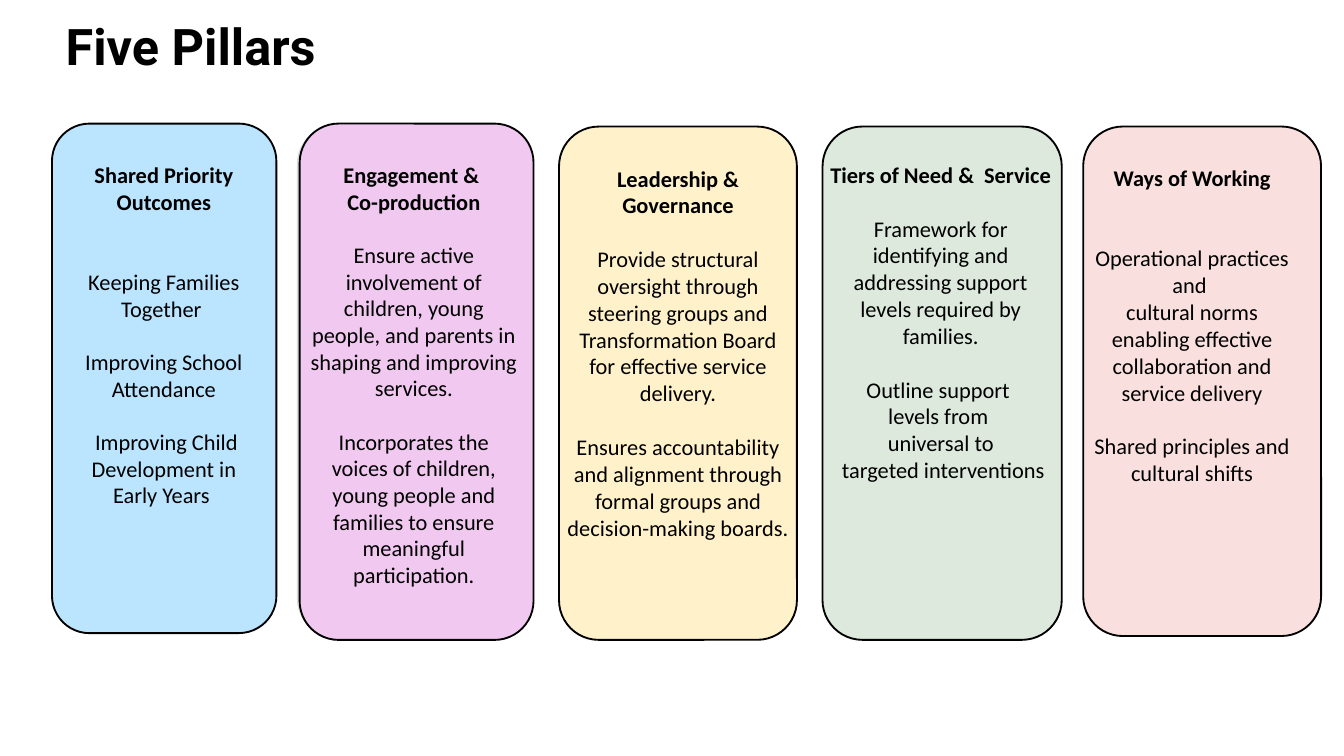
from dataclasses import dataclass

import pptx
import pptx.dml.color
import pptx.enum.shapes
import pptx.enum.text
import pptx.util


@dataclass(frozen=True)
class Theme:
    ink: str = "000000"
    backing: str = "D9D9D9"
    blue: str = "BBE5FF"
    pink: str = "F1C9F0"
    cream: str = "FFF2CB"
    green: str = "DDE9DD"
    rose: str = "F9E0DE"
    title_font: str = "Roboto"
    body_font: str = "Calibri"
    title_size: float = 27
    title_line: float = 17
    body_size: float = 12
    body_line: float = 14.3
    outline: float = 1


THEME = Theme()
WIDTH = pptx.util.Inches(10)
HEIGHT = WIDTH * 9 // 16
COLUMN, ROW = WIDTH / 100, HEIGHT / 100  # one hundredth of the slide each way

# box: left, top, width, height; copy: inset left, inset top, width.
# lines: blank lines before the paragraph, then its text; the first is the heading.
PILLARS = [
    dict(box=(3.87, 16.36, 16.7, 67.4), copy=(1.63, 5, 13.4), fill=THEME.blue, lines=[
        (0, "Shared Priority Outcomes"),
        (2, "Keeping Families Together "),
        (1, "Improving School Attendance"),
        (1, " Improving Child Development in Early Years "),
    ]),
    dict(box=(22.3, 16.36, 17.4, 68.3), copy=(0.8, 5, 15.4), fill=THEME.pink, lines=[
        (0, "Engagement & "),
        (0, "Co-production"),
        (1, "Ensure active involvement of children, young people, and parents "
            "in shaping and improving services."),
        (1, "Incorporates the voices of children, young people and families "
            "to ensure meaningful participation."),
    ], heading_lines=2, backing=(22.1, 16.5, 17.4, 67.8)),
    dict(box=(41.6, 16.74, 17.7, 67.9), copy=(0.6, 5.1, 16.5), fill=THEME.cream, lines=[
        (0, "Leadership & Governance"),
        (1, "Provide structural oversight through steering groups and "
            "Transformation Board for effective service delivery."),
        (1, "Ensures accountability and alignment through formal groups and "
            "decision-making boards."),
    ], single_spaced=True),
    dict(box=(61.2, 16.74, 17.8, 67.9), copy=(0.4, 4.6, 16.8), fill=THEME.green, lines=[
        (0, "Tiers of Need &  Service"),
        (1, "Framework for identifying and addressing support levels "
            "required by families."),
        (1, "Outline support "),
        (0, "levels from "),
        (0, "universal to"),
        (0, " targeted interventions"),
    ], single_spaced=True),
    dict(box=(80.6, 16.74, 17.7, 67.4), copy=(0.7, 5, 16.2), fill=THEME.rose, lines=[
        (0, "Ways of Working"),
        (2, "Operational practices and "),
        (0, "cultural norms enabling effective collaboration and service delivery"),
        (1, "Shared principles and cultural shifts"),
    ], single_spaced=True, heading_margin=1.4),
]


def rgb(value):
    return pptx.dml.color.RGBColor.from_string(value)


def on_grid(box):
    left, top, width, height = box
    return round(left * COLUMN), round(top * ROW), round(width * COLUMN), round(height * ROW)


def apply(target, formats):
    for name, value in formats.items():
        setattr(target, name, value)


def add_paragraph(frame, text, first, font, layout):
    paragraph = frame.paragraphs[0] if first else frame.add_paragraph()
    apply(paragraph, layout)
    run = paragraph.add_run()
    run.text = text
    apply(run.font, font)
    run.font.color.rgb = rgb(THEME.ink)
    return paragraph


def add_title(slide, box, text):
    frame = slide.shapes.add_textbox(*on_grid(box)).text_frame
    frame.word_wrap = True
    add_paragraph(
        frame, text, True,
        dict(name=THEME.title_font, size=pptx.util.Pt(THEME.title_size), bold=True),
        dict(line_spacing=pptx.util.Pt(THEME.title_line)),
    )


def add_panel(slide, box, fill, outlined=True):
    panel = slide.shapes.add_shape(
        pptx.enum.shapes.MSO_SHAPE.ROUNDED_RECTANGLE, *on_grid(box))
    panel.shadow.inherit = False
    panel.fill.solid()
    panel.fill.fore_color.rgb = rgb(fill)
    if outlined:
        panel.line.color.rgb = rgb(THEME.ink)
        panel.line.width = pptx.util.Pt(THEME.outline)
    else:
        panel.line.fill.background()


def add_pillar(slide, box, copy, fill, lines, heading_lines=1, backing=None,
               single_spaced=False, heading_margin=0):
    """Draw a panel, over an optional offset backing, with its heading and points."""
    if backing:
        add_panel(slide, backing, THEME.backing, outlined=False)
    add_panel(slide, box, fill)

    inset_left, inset_top, copy_width = copy
    copy_box = (box[0] + inset_left, box[1] + inset_top, copy_width, 57.3)
    frame = slide.shapes.add_textbox(*on_grid(copy_box)).text_frame
    apply(frame, dict(word_wrap=True, margin_left=0, margin_top=0,
                      margin_right=0, margin_bottom=0))
    for index, (blank_lines, text) in enumerate(lines):
        is_heading = index < heading_lines
        exact = is_heading or not single_spaced
        paragraph = add_paragraph(
            frame, text, index == 0,
            dict(name=THEME.body_font, size=pptx.util.Pt(THEME.body_size), bold=is_heading),
            dict(alignment=pptx.enum.text.PP_ALIGN.CENTER,
                 line_spacing=pptx.util.Pt(THEME.body_line) if exact else 1.0,
                 space_before=pptx.util.Pt(blank_lines * THEME.body_line)),
        )
        if is_heading and heading_margin:
            paragraph._p.get_or_add_pPr().set("marR", str(round(heading_margin * COLUMN)))


def main():
    deck = pptx.Presentation()
    apply(deck, dict(slide_width=WIDTH, slide_height=HEIGHT))
    slide = deck.slides.add_slide(deck.slide_layouts[6])
    add_title(slide, (3.9, 5, 57.8, 6.4), "Five Pillars")
    for pillar in PILLARS:
        add_pillar(slide, **pillar)
    deck.save("out.pptx")


if __name__ == "__main__":
    main()
